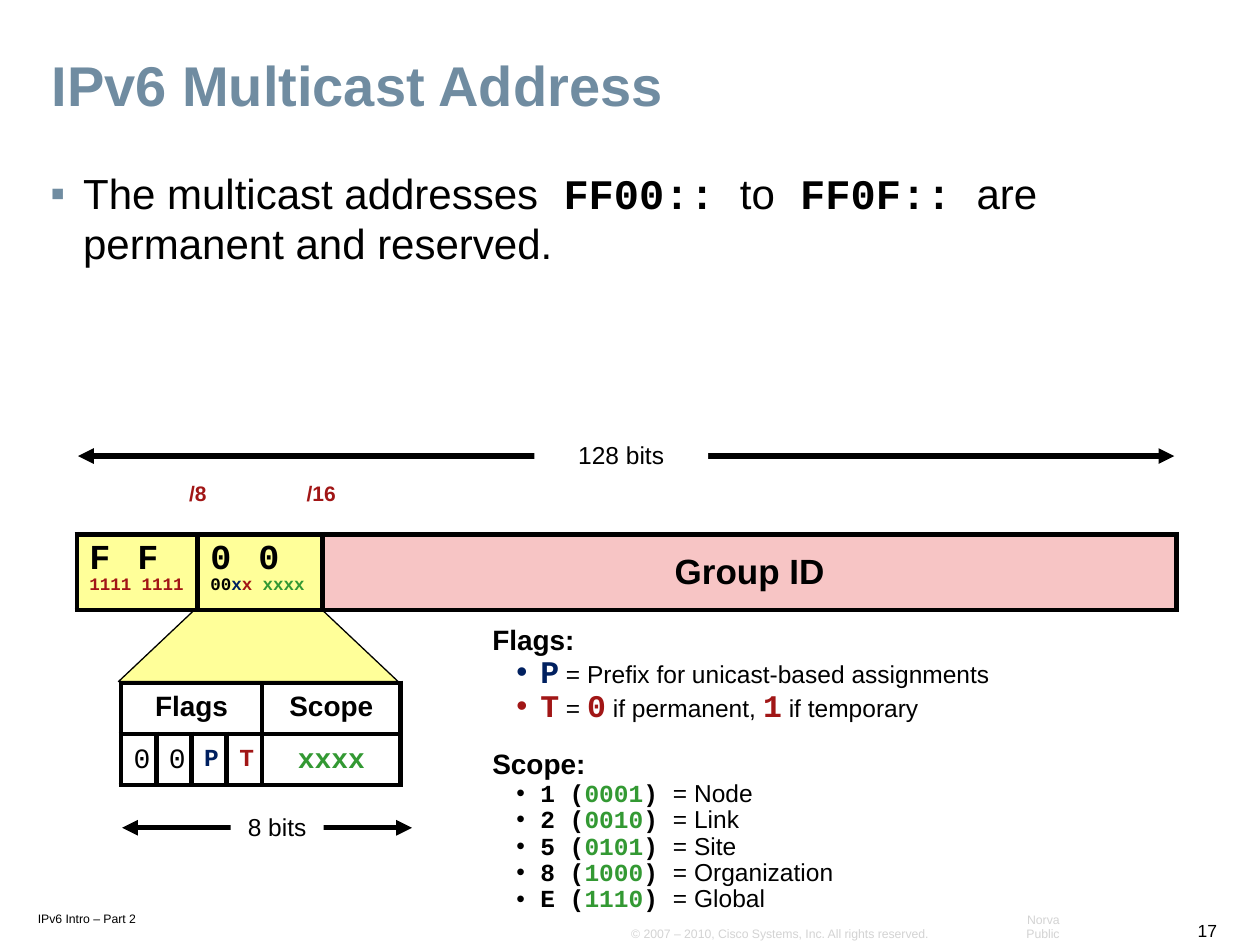
from dataclasses import dataclass
from typing import Optional

from lxml import etree
from pptx import Presentation
from pptx.dml.color import RGBColor
from pptx.enum.shapes import MSO_CONNECTOR, MSO_SHAPE
from pptx.enum.text import MSO_ANCHOR, MSO_AUTO_SIZE, PP_ALIGN
from pptx.oxml.ns import qn
from pptx.util import Inches, Pt

LEFT, CENTER, RIGHT = PP_ALIGN.LEFT, PP_ALIGN.CENTER, PP_ALIGN.RIGHT
TOP, MIDDLE, BOTTOM = MSO_ANCHOR.TOP, MSO_ANCHOR.MIDDLE, MSO_ANCHOR.BOTTOM
ARIAL, COURIER = "Arial", "Courier New"
BLACK = RGBColor(0x00, 0x00, 0x00)
WHITE = RGBColor(0xFF, 0xFF, 0xFF)
SLATE = RGBColor(0x70, 0x8C, 0xA1)
SILVER = RGBColor(0xD3, 0xD3, 0xD3)
NAVY = RGBColor(0x00, 0x20, 0x60)
RED = RGBColor(0xA1, 0x16, 0x16)
GREEN = RGBColor(0x33, 0x99, 0x33)
YELLOW = RGBColor(0xFF, 0xFF, 0x99)
PINK = RGBColor(0xF7, 0xC5, 0xC5)


@dataclass
class Span:
    text: str
    size: float
    color: RGBColor = BLACK
    bold: bool = False
    font: str = ARIAL


@dataclass
class Para:
    spans: list[Span]
    align: PP_ALIGN = LEFT
    line: float = 1.0
    before: float = 0
    after: float = 0
    bullet: str = ""
    bullet_color: Optional[RGBColor] = None
    indent: float = 0
    tab: float = 0


@dataclass
class Label:
    box: tuple[float, float, float, float]
    span: Span
    align: PP_ALIGN = LEFT
    anchor: MSO_ANCHOR = TOP
    inset: tuple[float, float] = (0.1, 0.05)
    line: float = 1.0


@dataclass
class Measure:
    left: float
    right: float
    y: float
    label: str
    label_left: float
    label_width: float


def code(text: str, size: float, color: RGBColor = BLACK, bold: bool = True) -> Span:
    return Span(text, size, color, bold, COURIER)


def format_run(r, span: Span) -> None:
    r.font.name, r.font.size, r.font.bold = span.font, Pt(span.size), span.bold
    r.font.color.rgb = span.color


def write(tf, paras: list[Para]) -> None:
    for i, para in enumerate(paras):
        p = tf.add_paragraph() if i else tf.paragraphs[0]
        p.alignment, p.line_spacing = para.align, para.line
        if para.before:
            p.space_before = Pt(para.before)
        if para.after:
            p.space_after = Pt(para.after)
        pPr = p._p.get_or_add_pPr()
        if para.bullet:
            pPr.set("marL", str(Inches(para.indent)))
            pPr.set("indent", str(Inches(-0.26 if para.bullet_color else -0.19)))
            if para.bullet_color:
                clr = etree.SubElement(pPr, qn("a:buClr"))
                etree.SubElement(clr, qn("a:srgbClr"), val=str(para.bullet_color))
            etree.SubElement(pPr, qn("a:buFont"), typeface=ARIAL)
            etree.SubElement(pPr, qn("a:buChar"), char=para.bullet)
        if para.tab:
            tabs = etree.SubElement(pPr, qn("a:tabLst"))
            etree.SubElement(tabs, qn("a:tab"), pos=str(Inches(para.tab)), algn="l")
        for span in para.spans:
            r = p.add_run()
            r.text = span.text
            format_run(r, span)


def add_text(slide, box, paras: list[Para], anchor=TOP, inset=(0.1, 0.05), wrap=False) -> None:
    tf = slide.shapes.add_textbox(*map(Inches, box)).text_frame
    tf.word_wrap, tf.vertical_anchor = wrap, anchor
    tf.margin_left = tf.margin_right = Inches(inset[0])
    tf.margin_top = tf.margin_bottom = Inches(inset[1])
    write(tf, paras)


def add_measure(slide, m: Measure) -> None:
    y = Inches(m.y)
    line = slide.shapes.add_connector(MSO_CONNECTOR.STRAIGHT, Inches(m.left), y, Inches(m.right), y)
    line.line.color.rgb, line.line.width = BLACK, Pt(3)
    ln = line.line._get_or_add_ln()
    for end in ("a:headEnd", "a:tailEnd"):
        etree.SubElement(ln, qn(end), type="triangle")
    etree.SubElement(line._element.spPr, qn("a:effectLst"))
    sp = slide.shapes.add_shape(MSO_SHAPE.RECTANGLE, Inches(m.label_left), Inches(m.y - 0.18),
                                Inches(m.label_width), Inches(0.34))
    sp.shadow.inherit = False
    sp.fill.solid()
    sp.fill.fore_color.rgb = WHITE
    sp.line.fill.background()
    write(sp.text_frame, [Para([Span(m.label, 14)], CENTER)])


def add_grid(slide, left: float, top: float, cols: list[float], rows: list[float]):
    table = slide.shapes.add_table(len(rows), len(cols), Inches(left), Inches(top),
                                   Inches(sum(cols)), Inches(sum(rows))).table
    table.first_row = table.horz_banding = False
    for col, width in zip(table.columns, cols):
        col.width = Inches(width)
    for row, height in zip(table.rows, rows):
        row.height = Inches(height)
    for cell in table.iter_cells():
        cell.fill.background()
        tcPr = cell._tc.get_or_add_tcPr()
        for i, side in enumerate(("a:lnL", "a:lnR", "a:lnT", "a:lnB")):
            ln = etree.Element(qn(side), w=str(Pt(3)))
            fill = etree.SubElement(ln, qn("a:solidFill"))
            etree.SubElement(fill, qn("a:srgbClr"), val=str(BLACK))
            tcPr.insert(i, ln)
    return table


def fill_cell(cell, paras: list[Para], anchor=MIDDLE, fill: Optional[RGBColor] = None) -> None:
    cell.vertical_anchor = anchor
    if fill is not None:
        cell.fill.solid()
        cell.fill.fore_color.rgb = fill
    write(cell.text_frame, paras)


def main() -> None:
    prs = Presentation()
    prs.slide_width, prs.slide_height = Inches(10), Inches(7.5)
    slide = prs.slides.add_slide(prs.slide_layouts[5])

    title = slide.shapes.title
    title.left, title.top, title.width, title.height = map(Inches, (0.31, 0.4, 9.32, 0.6))
    tf = title.text_frame
    tf.text = "IPv6 Multicast Address"
    tf.auto_size, tf.vertical_anchor = MSO_AUTO_SIZE.NONE, MIDDLE
    p = tf.paragraphs[0]
    p.alignment, p.line_spacing = LEFT, 0.9
    format_run(p.runs[0], Span("", 32, SLATE, True))

    intro = [Span("The multicast addresses", 24), code(" FF00:: ", 24), Span("to", 24),
             code(" FF0F:: ", 24), Span("are permanent and reserved.", 24)]
    add_text(slide, (0.31, 1.29, 9.32, 2.64),
             [Para(intro, after=6, bullet="▪", bullet_color=SLATE, indent=0.26)],
             inset=(0.09, 0.04), wrap=True)

    small = (0.09, 0.04)
    for lb in (
        Label((0.21, 7.18, 1.05, 0.21), Span("IPv6 Intro – Part 2", 7), LEFT, BOTTOM, small),
        Label((9.4, 7.25, 0.35, 0.26), Span("17", 10), RIGHT, BOTTOM, small),
        Label((4.92, 7.3, 2.57, 0.21),
              Span("© 2007 – 2010, Cisco Systems, Inc. All rights reserved.", 7, SILVER),
              LEFT, BOTTOM, small),
        Label((7.79, 7.3, 0.71, 0.21), Span("Norva Public", 7, SILVER), RIGHT, BOTTOM, small),
        Label((1.4, 3.79, 0.34, 0.28), Span("/8", 12, RED, True), CENTER, line=0.9),
        Label((2.33, 3.79, 0.44, 0.28), Span("/16", 12, RED, True), CENTER, line=0.9),
    ):
        add_text(slide, lb.box, [Para([lb.span], lb.align, lb.line)], lb.anchor, lb.inset)

    bits = add_grid(slide, 0.96, 5.42, [0.28] * 4 + [1.1], [0.405] * 2)
    bits.cell(0, 0).merge(bits.cell(0, 3))
    for row, col, span in (
        (0, 0, Span("Flags", 16, bold=True)), (0, 4, Span("Scope", 16, bold=True)),
        (1, 0, code("0", 16, bold=False)), (1, 1, code("0", 16, bold=False)),
        (1, 2, code("P", 14, NAVY)), (1, 3, code("T", 14, RED)), (1, 4, code("xxxx", 16, GREEN)),
    ):
        fill_cell(bits.cell(row, col), [Para([span], CENTER, 0.9)])

    for m in (Measure(0.97, 3.27, 6.57, "8 bits", 1.83, 0.74),
              Measure(0.62, 9.32, 3.62, "128 bits", 4.24, 1.38)):
        add_measure(slide, m)

    items = [
        [code("P", 18, NAVY), Span(" = Prefix for unicast-based assignments", 14)],
        [code("T", 18, RED), Span(" = ", 14), code("0", 18, RED), Span(" if permanent, ", 14),
         code("1", 18, RED), Span(" if temporary", 14)],
    ]
    scopes = [("1", "0001", "Node"), ("2", "0010", "Link"), ("5", "0101", "Site"),
              ("8", "1000", "Organization"), ("E", "1110", "Global")]
    scope_items = [[code(f"{digit} (", 14), code(binary, 14, GREEN), code(") ", 14),
                    Span(f"= {name}", 14)] for digit, binary, name in scopes]
    legend = []
    for heading, before, entries in (("Flags:", 0, items), ("Scope:", 15, scope_items)):
        legend.append(Para([Span(heading, 16, bold=True)], line=0.9, before=before))
        legend += [Para(spans, line=0.9, bullet="•", indent=0.38) for spans in entries]
    add_text(slide, (3.81, 4.92, 7.33, 1.19), legend)

    zoom = slide.shapes.add_shape(MSO_SHAPE.TRAPEZOID, *map(Inches, (0.94, 4.85, 2.22, 0.56)))
    zoom.adjustments[0] = 1.06
    zoom.shadow.inherit = False
    zoom.fill.solid()
    zoom.fill.fore_color.rgb = YELLOW
    zoom.line.color.rgb, zoom.line.width = BLACK, Pt(0.75)

    address = add_grid(slide, 0.61, 4.24, [0.96, 0.99, 6.78], [0.6])
    prefixes = [
        ("F\tF", [code("1111 1111", 10, RED)]),
        ("0\t0", [code("00", 10), code("x", 10, NAVY), code("x ", 10, RED), code("xxxx", 10, GREEN)]),
    ]
    for col, (digits, binary) in enumerate(prefixes):
        fill_cell(address.cell(0, col), [Para([code(digits, 20)], line=0.9, tab=0.38), Para(binary)],
                  TOP, YELLOW)
    fill_cell(address.cell(0, 2), [Para([Span("Group ID", 20, bold=True)], CENTER)], fill=PINK)

    prs.save("out.pptx")


if __name__ == "__main__":
    main()
